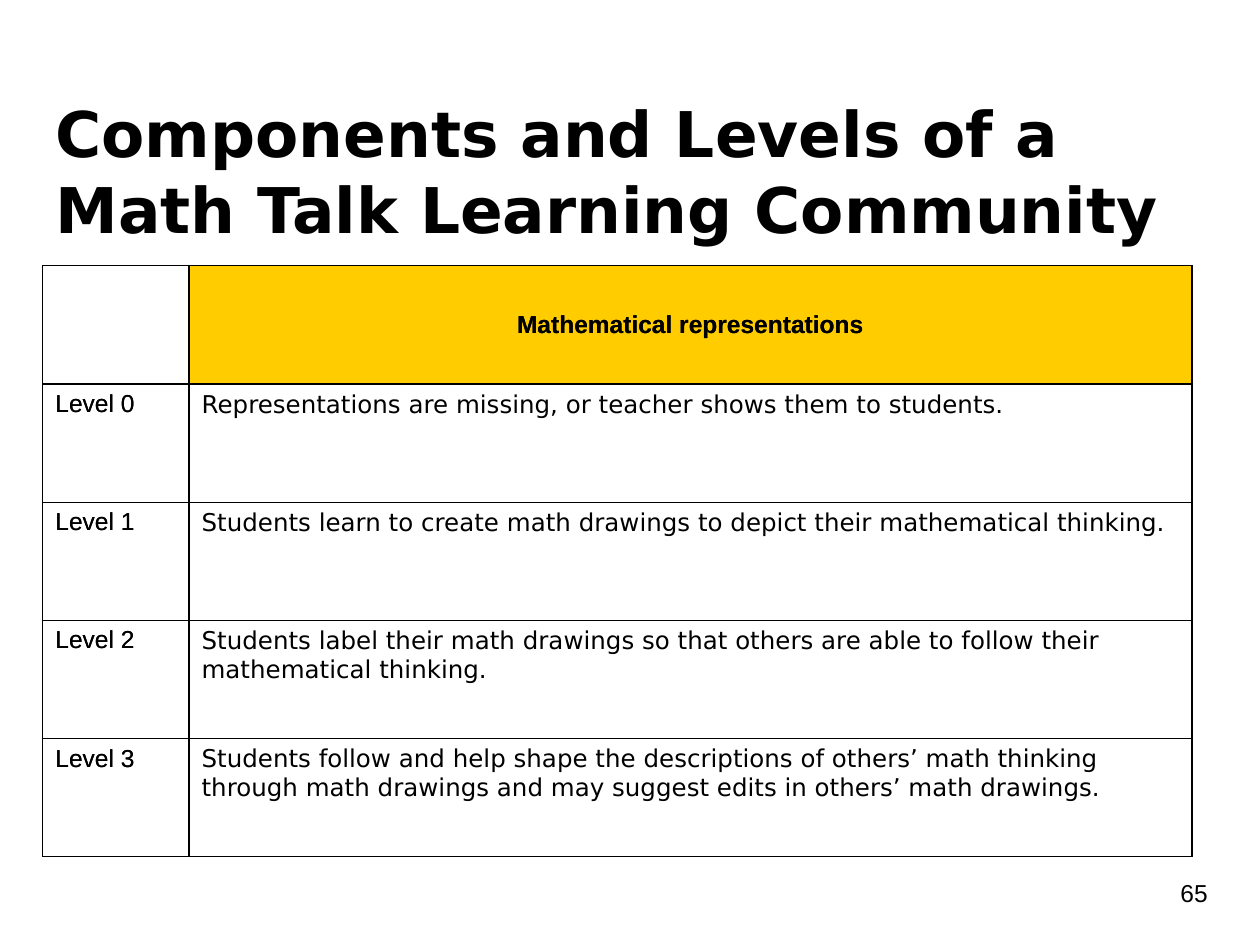
from lxml import etree
from pptx import Presentation
from pptx import util as u
from pptx.dml.color import RGBColor
from pptx.enum import text
from pptx.oxml import ns

BLACK = RGBColor(0, 0, 0)
GOLD = RGBColor(255, 204, 0)
HEADING_FONT = "DejaVu Sans"
LABEL_FONT = "Arial"

LEFT, TABLE_TOP = u.Inches(0.34), u.Inches(2.11)
TABLE_HEIGHT = u.Inches(4.69)
COLUMN_WIDTHS = [u.Inches(1.16), u.Inches(7.96)]
INSET = u.Inches(0.1)

HEADING = "Mathematical representations"
DESCRIPTIONS = [
    "Representations are missing, or teacher shows them to students.",
    "Students learn to create math drawings to depict their mathematical thinking.",
    "Students label their math drawings so that others are able to follow "
    "their mathematical thinking.",
    "Students follow and help shape the descriptions of others’ math thinking "
    "through math drawings and may suggest edits in others’ math drawings.",
]
LEVELS = [f"Level {level}" for level in range(len(DESCRIPTIONS))]
FRAMEWORK = [("", HEADING)] + [(level, "") for level in LEVELS]
DETAILS = [("", HEADING)] + list(zip(LEVELS, DESCRIPTIONS))


def write(frame, content, size, font_name, bold=False, align=text.PP_ALIGN.LEFT):
    frame.word_wrap = True
    frame.text = content
    paragraph = frame.paragraphs[0]
    paragraph.alignment = align
    paragraph.font.size = u.Pt(size)
    paragraph.font.name = font_name
    paragraph.font.bold = bold
    paragraph.font.color.rgb = BLACK


def add_borders(cell):
    properties = cell._tc.get_or_add_tcPr()
    for position, side in enumerate(("lnL", "lnR", "lnT", "lnB")):
        line = etree.Element(ns.qn(f"a:{side}"), w=str(u.Pt(0.75)))
        fill = etree.SubElement(line, ns.qn("a:solidFill"))
        etree.SubElement(fill, ns.qn("a:srgbClr"), val=str(BLACK))
        properties.insert(position, line)


presentation = Presentation()
presentation.slide_width, presentation.slide_height = u.Inches(10), u.Inches(7.5)
slide = presentation.slides.add_slide(presentation.slide_layouts[5])

title = slide.shapes.title
title.left, title.top = LEFT, u.Inches(0.65)
title.width, title.height = u.Inches(9.32), u.Inches(0.84)
write(title.text_frame, "Components and Levels of a Math Talk Learning Community",
      36, HEADING_FONT, bold=True)
title.text_frame.vertical_anchor = text.MSO_ANCHOR.TOP

number = slide.shapes.add_textbox(u.Inches(9.27), u.Inches(6.8), u.Inches(0.6), u.Inches(0.57))
write(number.text_frame, "65", 14, LABEL_FONT)
number.text_frame.vertical_anchor = text.MSO_ANCHOR.MIDDLE

for frame in (title.text_frame, number.text_frame):
    frame.auto_size = text.MSO_AUTO_SIZE.NONE
    frame.margin_left = frame.margin_right = INSET
    frame.margin_top = frame.margin_bottom = INSET

for rows, heading_fill in ((FRAMEWORK, GOLD), (DETAILS, None)):
    table = slide.shapes.add_table(len(rows), len(COLUMN_WIDTHS), LEFT, TABLE_TOP,
                                   sum(COLUMN_WIDTHS), TABLE_HEIGHT).table
    for column, width in zip(table.columns, COLUMN_WIDTHS):
        column.width = width
    for row_index, row in enumerate(rows):
        for column_index, content in enumerate(row):
            cell = table.cell(row_index, column_index)
            is_heading = content == HEADING
            if is_heading and heading_fill:
                cell.fill.solid()
                cell.fill.fore_color.rgb = heading_fill
            else:
                cell.fill.background()
            add_borders(cell)
            if is_heading:
                write(cell.text_frame, content, 14, LABEL_FONT, True, text.PP_ALIGN.CENTER)
                cell.vertical_anchor = text.MSO_ANCHOR.MIDDLE
            else:
                write(cell.text_frame, content, 14, HEADING_FONT if column_index else LABEL_FONT)

presentation.save("out.pptx")
